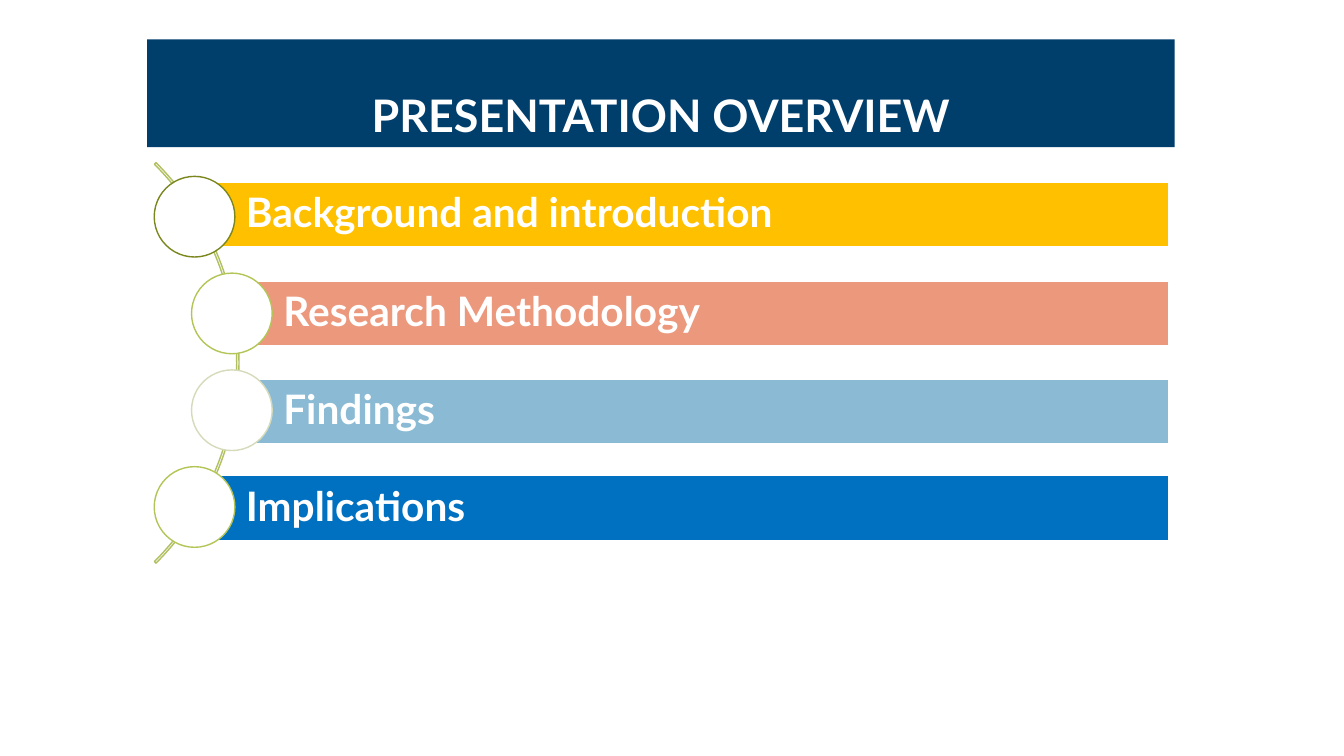
import pptx
import pptx.util
import pptx.dml.color
import pptx.enum.shapes
import pptx.enum.text

Inches = pptx.util.Inches
Pt = pptx.util.Pt
SHAPES = pptx.enum.shapes.MSO_SHAPE
ALIGN = pptx.enum.text.PP_ALIGN
ANCHOR = pptx.enum.text.MSO_ANCHOR

TITLE = "PRESENTATION OVERVIEW"
# topic, circle left, bar top, bar colour, circle outline
TOPICS = [
    ("Background and introduction", 1.53, 1.81, "FFC000", "7B871D"),
    ("Research Methodology", 1.9, 2.79, "EC987D", "B4C558"),
    ("Findings", 1.9, 3.76, "8ABAD4", "D5DBBA"),
    ("Implications", 1.53, 4.72, "0070C0", "B4C558"),
]
THEME = {
    "font": "Lato", "title_size": 32, "topic_size": 29,
    "white": "FFFFFF", "navy": "003E6C", "arc": "B2C062",
}

CIRCLE_TOP, CIRCLE_SIZE, CIRCLE_STEP = 1.75, 0.8, 0.96
BAR_RIGHT, BAR_HEIGHT = 11.59, 0.64


def rgb(code):
    return pptx.dml.color.RGBColor.from_string(code)


def add_shape(page, kind, place, fill=None, line=None):
    """Add a flat shape; a missing fill or line colour means none."""
    shape = page.shapes.add_shape(kind, *[Inches(length) for length in place])
    shape.shadow.inherit = False
    if fill:
        shape.fill.solid()
        shape.fill.fore_color.rgb = rgb(fill)
    else:
        shape.fill.background()
    if line:
        shape.line.color.rgb = rgb(line)
        shape.line.width = Pt(1)
    else:
        shape.line.fill.background()
    return shape


def write(shape, text, size, align, anchor):
    frame = shape.text_frame
    frame.word_wrap = True
    frame.vertical_anchor = anchor
    para = frame.paragraphs[0]
    para.text = text
    para.alignment = align
    para.line_spacing = 0.9
    para.font.name = THEME["font"]
    para.font.size = Pt(size)
    para.font.bold = True
    para.font.color.rgb = rgb(THEME["white"])
    return frame


def add_topic(page, index, topic, circle_left, bar_top, fill, outline):
    bar_left = circle_left + CIRCLE_SIZE / 2
    bar = add_shape(page, SHAPES.RECTANGLE,
                    (bar_left, bar_top, BAR_RIGHT - bar_left, BAR_HEIGHT),
                    fill, THEME["white"])
    frame = write(bar, topic, THEME["topic_size"], ALIGN.LEFT, ANCHOR.MIDDLE)
    frame.margin_left = Inches(0.51)
    frame.margin_top = frame.margin_right = frame.margin_bottom = Inches(0.08)
    circle_top = CIRCLE_TOP + index * CIRCLE_STEP
    add_shape(page, SHAPES.OVAL,
              (circle_left, circle_top, CIRCLE_SIZE, CIRCLE_SIZE),
              THEME["white"], outline)


def main():
    deck = pptx.Presentation()
    deck.slide_width, deck.slide_height = Inches(13.33), Inches(7.5)
    page = deck.slides.add_slide(deck.slide_layouts[6])

    banner = add_shape(page, SHAPES.RECTANGLE, (1.46, 0.39, 10.19, 1.07), THEME["navy"])
    write(banner, TITLE, THEME["title_size"], ALIGN.CENTER, ANCHOR.BOTTOM)

    arc = add_shape(page, SHAPES.BLOCK_ARC, (-3.25, 0.79, 5.62, 5.62), line=THEME["arc"])
    for position, value in enumerate((189, 27, 0.004)):
        arc.adjustments[position] = value

    for index, topic in enumerate(TOPICS):
        add_topic(page, index, *topic)

    deck.save("out.pptx")


if __name__ == "__main__":
    main()
